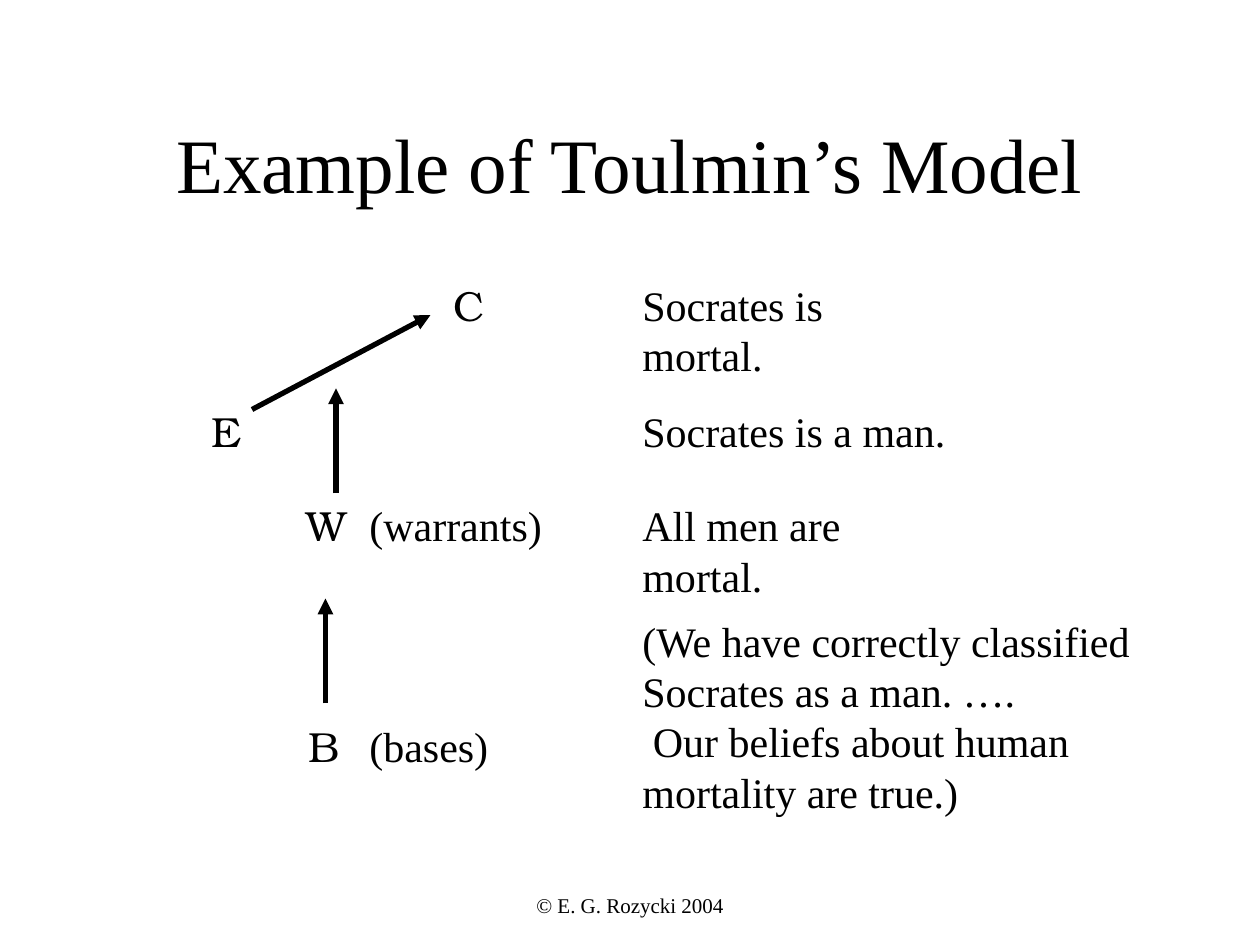
from dataclasses import dataclass

from lxml.etree import SubElement
from pptx import Presentation
from pptx.dml.color import RGBColor
from pptx.enum.shapes import MSO_CONNECTOR as Connector
from pptx.enum.text import MSO_ANCHOR as Anchor, PP_ALIGN as Align
from pptx.oxml.ns import qn
from pptx.util import Pt


@dataclass(frozen=True)
class Theme:
    ink: RGBColor = RGBColor(0, 0, 0)
    paper: RGBColor = RGBColor(255, 255, 255)
    body_font: str = "Times New Roman"
    symbol_font: str = "TeX Gyre Bonum"
    title_size: float = 44
    body_size: float = 24
    footer_size: float = 12
    leading: float = 28.8
    arrow_width: float = 3


THEME = Theme()
CLAIM_ROW, EVIDENCE_ROW, WARRANT_ROW, BASES_ROW = 156, 228, 282, 408
NOTE_X, STATEMENT_X = 204, 360
ROW_HEIGHT = 36

SYMBOLS = [
    ("C", 252, CLAIM_ROW, 40),
    ("E", 114, EVIDENCE_ROW, 32),
    ("W", 168, WARRANT_ROW, 41),
    ("B", 169, BASES_ROW, 35),
]
NOTES = [("(warrants)", WARRANT_ROW, 113), ("(bases)", BASES_ROW, 83)]
STATEMENTS = [
    ("Socrates is mortal.", CLAIM_ROW, 192),
    ("Socrates is a man.", EVIDENCE_ROW, 188),
    ("All men are mortal.", WARRANT_ROW, 202),
]
BACKING = (
    "(We have correctly classified\n"
    "Socrates as a man. ….\n"
    " Our beliefs about human\n"
    "mortality are true.)"
)
ARROWS = [
    ((144, 234), (246, 180)),
    ((192, 282), (192, 222)),
    ((186, 402), (186, 342)),
]


def add_text(slide, text, left, top, width, height=ROW_HEIGHT, *,
             font=THEME.body_font, size=THEME.body_size, leading=THEME.leading,
             align=Align.LEFT, anchor=Anchor.TOP, wrap=False, inset_top=3.6):
    frame = slide.shapes.add_textbox(
        Pt(left), Pt(top), Pt(width), Pt(height)).text_frame
    frame.word_wrap = wrap
    frame.vertical_anchor = anchor
    frame.margin_top = Pt(inset_top)
    frame.text = text
    for paragraph in frame.paragraphs:
        paragraph.alignment = align
        if leading:
            paragraph.line_spacing = Pt(leading)
        for run in paragraph.runs:
            run.font.name = font
            run.font.size = Pt(size)
            run.font.color.rgb = THEME.ink


def add_arrow(slide, start, end):
    arrow = slide.shapes.add_connector(
        Connector.STRAIGHT, *(Pt(value) for value in start + end))
    arrow.line.color.rgb = THEME.ink
    arrow.line.width = Pt(THEME.arrow_width)
    SubElement(arrow.line._get_or_add_ln(), qn("a:tailEnd"), type="triangle")
    SubElement(arrow._element.spPr, qn("a:effectLst"))


def main():
    deck = Presentation()
    deck.slide_width, deck.slide_height = Pt(720), Pt(540)
    slide = deck.slides.add_slide(deck.slide_layouts[6])
    slide.background.fill.solid()
    slide.background.fill.fore_color.rgb = THEME.paper

    add_text(slide, "© E. G. Rozycki 2004", 246, 492, 228, size=THEME.footer_size,
             leading=None, align=Align.CENTER, wrap=True, inset_top=18)
    add_text(slide, "Example of Toulmin’s Model", 54, 48, 612, 90,
             size=THEME.title_size, leading=None, align=Align.CENTER,
             anchor=Anchor.MIDDLE, wrap=True)
    for statement, row, width in STATEMENTS:
        add_text(slide, statement, STATEMENT_X, row, width)
    for symbol, left, row, width in SYMBOLS:
        add_text(slide, symbol, left, row, width, font=THEME.symbol_font)
    for start, end in ARROWS:
        add_arrow(slide, start, end)
    for note, row, width in NOTES:
        add_text(slide, note, NOTE_X, row, width)
    add_text(slide, BACKING, STATEMENT_X, 348, 295, 122.4)

    deck.save("out.pptx")


if __name__ == "__main__":
    main()
